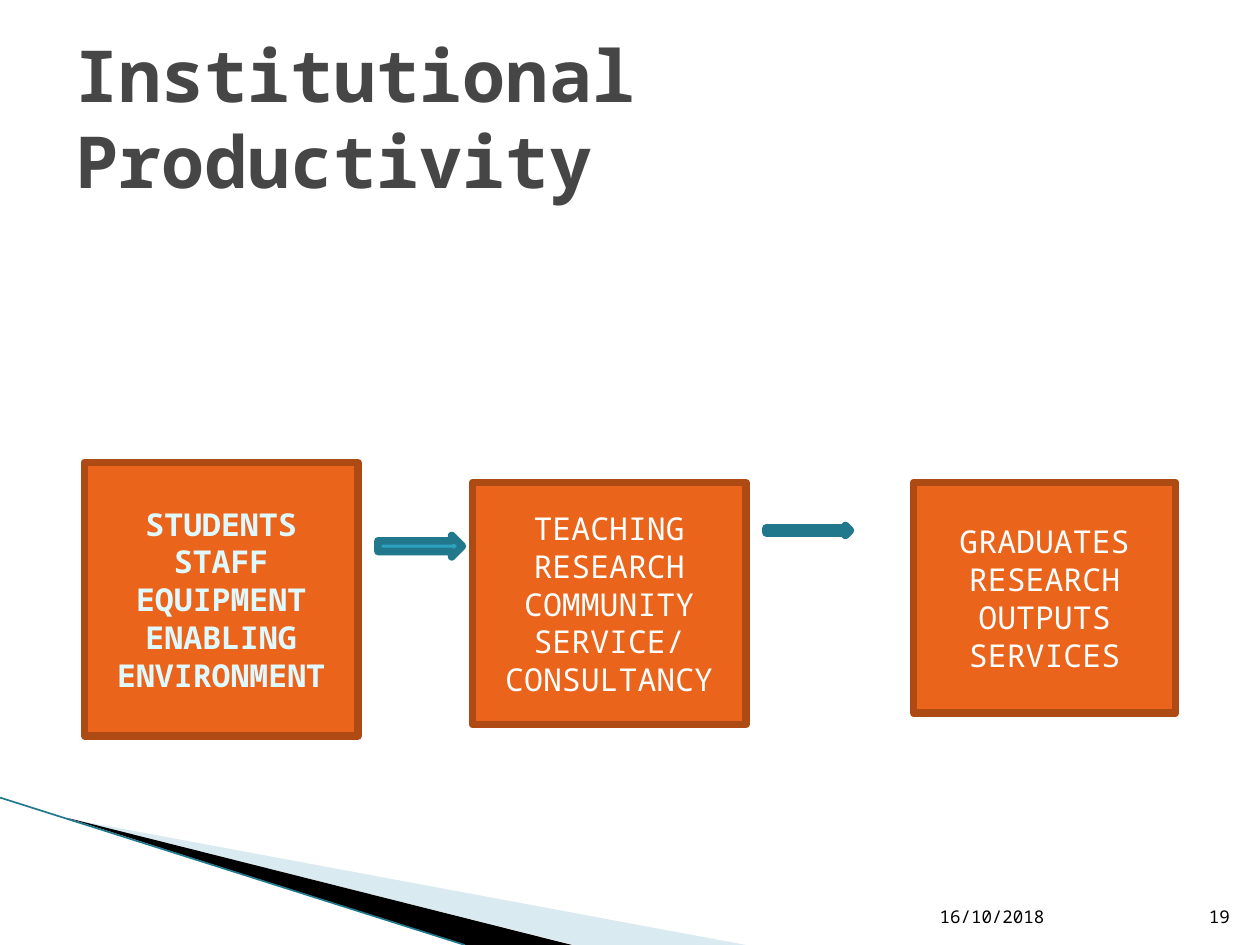
import pptx
import pptx.dml.color
import pptx.enum.shapes
import pptx.enum.text
import pptx.oxml
import pptx.oxml.ns
import pptx.util
from pptx.util import Inches

COLORS = {
    "title": "464646", "box": "EB641B", "box_line": "AE4A14",
    "arrow": "2DA2BF", "arrow_line": "21788D", "pale": "A0CBDC",
    "black": "000000", "white": "FFFFFF", "ice": "DFF9FF",
}
SHAPES = pptx.enum.shapes.MSO_SHAPE
ANCHOR = pptx.enum.text.MSO_ANCHOR
ALIGN = pptx.enum.text.PP_ALIGN


def rgb(name):
    return pptx.dml.color.RGBColor.from_string(COLORS[name])


def write(shape, lines, size, color, bold=False, align=ALIGN.LEFT, anchor=ANCHOR.MIDDLE):
    frame = shape.text_frame
    frame.text = "\n".join(lines)
    frame.word_wrap = True
    frame.auto_size = pptx.enum.text.MSO_AUTO_SIZE.NONE
    frame.vertical_anchor = anchor
    font_format = {"name": "Noto Sans Mono", "size": pptx.util.Pt(size), "bold": bold}
    for paragraph in frame.paragraphs:
        paragraph.alignment = align
        for run in paragraph.runs:
            for key, value in font_format.items():
                setattr(run.font, key, value)
            run.font.color.rgb = rgb(color)


presentation = pptx.Presentation()
presentation.slide_width = Inches(10)
presentation.slide_height = Inches(7.5)
slide = presentation.slides.add_slide(presentation.slide_layouts[5])
shapes = slide.shapes

# Corner wedges
wedges = [
    ("pale", [(0.55, 6.5), (5.92, 7.5), (4.56, 7.5)]),
    ("black", [(0.53, 6.49), (4.54, 7.5), (3.69, 7.5)]),
]
for color, points in wedges:
    corners = [(Inches(x), Inches(y)) for x, y in points]
    builder = shapes.build_freeform(*corners[0])
    builder.add_line_segments(corners[1:], close=True)
    wedge = builder.convert_to_shape()
    wedge.shadow.inherit = False
    wedge.fill.solid()
    wedge.fill.fore_color.rgb = rgb(color)
    wedge.line.fill.background()
    if color == "pale":
        fill_color = wedge.fill._xPr.find(".//" + pptx.oxml.ns.qn("a:srgbClr"))
        alpha = pptx.oxml.parse_xml(f'<a:alpha {pptx.oxml.ns.nsdecls("a")} val="40000"/>')
        fill_color.append(alpha)

# Corner edge line
edge = shapes.add_connector(
    pptx.enum.shapes.MSO_CONNECTOR.STRAIGHT,
    Inches(0), Inches(6.33), Inches(3.69), Inches(7.5))
edge.line.color.rgb = rgb("arrow_line")
edge.line.width = pptx.util.Pt(0.95)
edge._element.spPr.append(
    pptx.oxml.parse_xml(f'<a:effectLst {pptx.oxml.ns.nsdecls("a")}/>'))

# Title
title = shapes.title
title.left, title.top = Inches(0.5), Inches(0.3)
title.width, title.height = Inches(9), Inches(1.25)
write(title, ["Institutional Productivity"], 41, "title", bold=True)

# Process boxes and arrows: preset, place, fill, line, lines of text, text colour, bold
blocks = [
    (SHAPES.RECTANGLE, (3.75, 3.83, 2.17, 1.92), "box", "box_line",
     ["TEACHING", "RESEARCH", "COMMUNITY SERVICE/", "CONSULTANCY"], "white", False),
    (SHAPES.RECTANGLE, (7.25, 3.83, 2.08, 1.83), "box", "box_line",
     ["GRADUATES", "RESEARCH OUTPUTS", "SERVICES"], "white", False),
    (SHAPES.RECTANGLE, (0.67, 3.67, 2.17, 2.17), "box", "box_line",
     ["STUDENTS", "STAFF", "EQUIPMENT", "ENABLING ENVIRONMENT"], "ice", True),
    (SHAPES.RIGHT_ARROW, (3, 4.25, 0.67, 0.17), "arrow", "arrow_line", [], "white", False),
    (SHAPES.RIGHT_ARROW, (6.08, 4.17, 0.67, 0.08), "arrow", "arrow_line", [], "white", False),
]
for preset, place, fill, line, lines, color, bold in blocks:
    block = shapes.add_shape(preset, *map(Inches, place))
    block.shadow.inherit = False
    block.fill.solid()
    block.fill.fore_color.rgb = rgb(fill)
    block.line.color.rgb = rgb(line)
    block.line.width = pptx.util.Pt(4.33)
    if lines:
        write(block, lines, 18, color, bold, ALIGN.CENTER)

# Date and slide number
for text, left, width, align in [
    ("16/10/2018", 7.36, 2.1, ALIGN.LEFT),
    ("19", 9.46, 0.4, ALIGN.RIGHT),
]:
    footer = shapes.add_textbox(Inches(left), Inches(7.01), Inches(width), Inches(0.4))
    write(footer, [text], 10, "black", align=align, anchor=ANCHOR.BOTTOM)

presentation.save("out.pptx")
